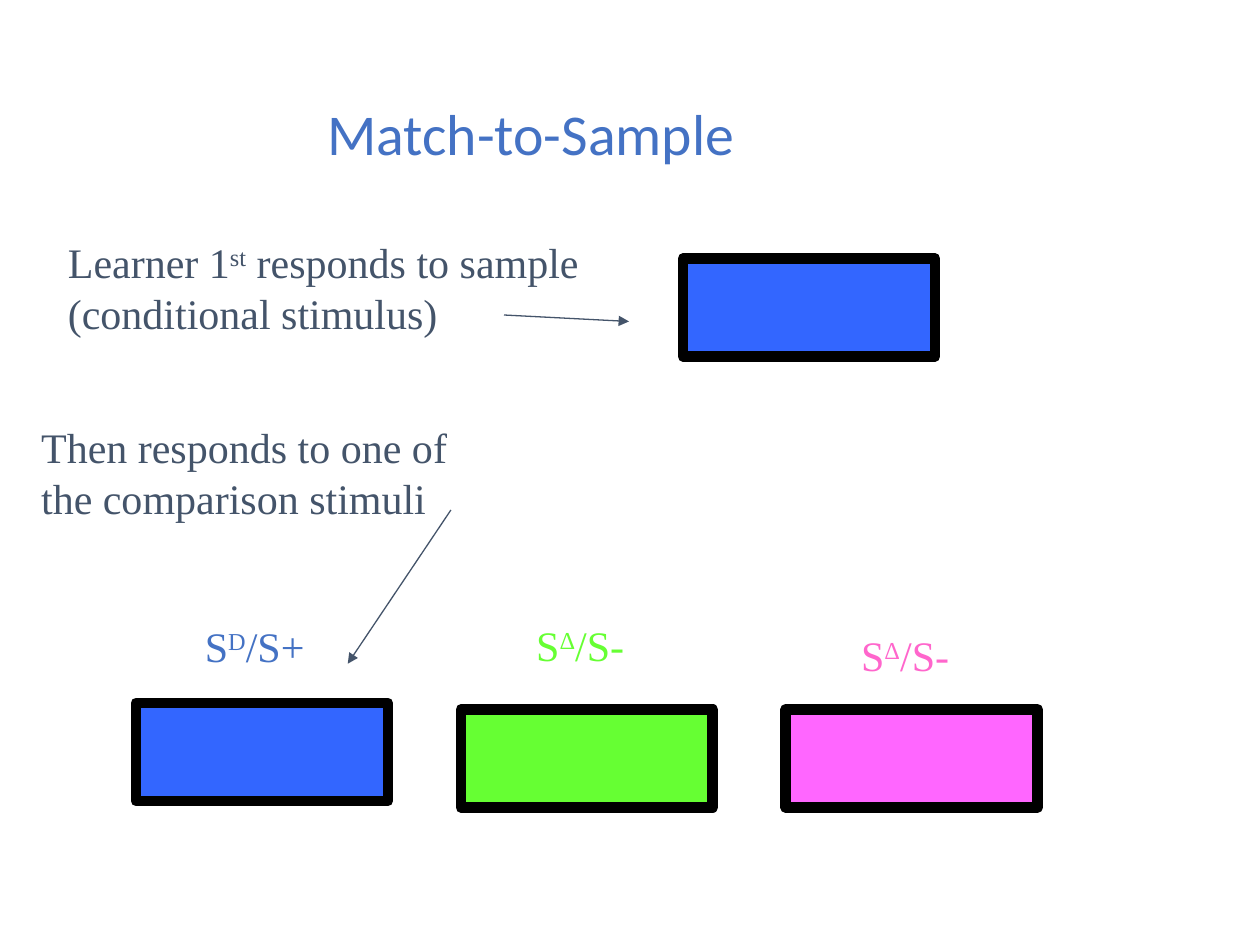
from lxml.etree import SubElement
from pptx import Presentation
from pptx.dml.color import RGBColor
from pptx.enum.shapes import MSO_CONNECTOR as Line, MSO_SHAPE as Shape
from pptx.enum.text import MSO_ANCHOR as Anchor
from pptx.oxml.ns import qn
from pptx.util import Cm, Pt

SLATE, ACCENT, BLUE = "44546A", "4472C4", "3366FF"
GREEN, PINK, ROSE = "66FF33", "FF66FF", "FF66CC"
CARD_WIDTH, CARD_HEIGHT = 5.08, 1.98
CARD_PITCH = 6.55
BODY = {"name": "Times New Roman", "size": Pt(24)}
HEADING = {"name": "Calibri", "size": Pt(33)}


def color(hex_text):
    return RGBColor.from_string(hex_text)


def add_text(page, box, spans, hex_text, formats=BODY):
    """Write (text, is_superscript) spans as one paragraph and return its frame."""
    frame = page.shapes.add_textbox(*map(Cm, box)).text_frame
    frame.word_wrap = True
    para = frame.paragraphs[0]
    for text, is_superscript in spans:
        span = para.add_run()
        span.text = text
        for name, value in formats.items():
            setattr(span.font, name, value)
        span.font.color.rgb = color(hex_text)
        if is_superscript:
            span._r.get_or_add_rPr().set("baseline", "30000")
    return frame


def add_card(page, left, top, fill):
    card = page.shapes.add_shape(
        Shape.RECTANGLE, Cm(left), Cm(top), Cm(CARD_WIDTH), Cm(CARD_HEIGHT))
    card.shadow.inherit = False
    card.fill.solid()
    card.fill.fore_color.rgb = color(fill)
    card.line.color.rgb = color("000000")
    card.line.width = Pt(6)


def add_arrow(page, start, end):
    arrow = page.shapes.add_connector(Line.STRAIGHT, *map(Cm, start + end))
    arrow.line.color.rgb = color(SLATE)
    arrow.line.width = Pt(0.75)
    SubElement(arrow.line._get_or_add_ln(), qn("a:tailEnd"), type="triangle")
    SubElement(arrow._element.spPr, qn("a:effectLst"))


def add_title(page, box):
    frame = add_text(page, box, [("Match-to-Sample", False)], ACCENT, HEADING)
    frame.vertical_anchor = Anchor.MIDDLE
    frame.paragraphs[0].line_spacing = 0.9


def add_sample_step(page, left, top):
    spans = [("Learner 1", False), ("st", True),
             (" responds to sample (conditional stimulus)", False)]
    add_text(page, (left, top, 11.58, 2.31), spans, SLATE)
    add_arrow(page, (left + 9.04, top + 1.7), (left + 11.56, top + 1.83))
    add_card(page, left + 12.65, top + 0.56, BLUE)


def add_comparison_step(page, left, top):
    spans = [("Then responds to one of the comparison stimuli", False)]
    add_text(page, (left, top, 9.58, 2.31), spans, SLATE)
    add_arrow(page, (left + 8.51, top + 1.9), (left + 6.43, top + 5))


def add_comparisons(page, left, top):
    """Place the row of labelled cards; offsets are measured from the row's corner."""
    choices = [
        # superscript, ending, text colour, fill, card drop, label indent, label rise
        ("D", "/S+", ACCENT, BLUE, 0, 1.14, 1.78),
        ("Δ", "/S-", GREEN, GREEN, 0.13, 1.27, 1.8),
        ("Δ", "/S-", ROSE, PINK, 0.13, 1.27, 1.6),
    ]
    for index, (mark, ending, ink, fill, drop, indent, rise) in enumerate(choices):
        card_left = left + index * CARD_PITCH
        add_card(page, card_left, top + drop, fill)
        spans = [("S", False), (mark, True), (ending, False)]
        add_text(page, (card_left + indent, top - rise, 2.62, 1.2), spans, ink)


def main():
    deck = Presentation()
    deck.slide_width, deck.slide_height = Cm(25.4), Cm(19.05)
    page = deck.slides.add_slide(deck.slide_layouts[6])
    add_title(page, (6.35, 0.64, 13.13, 4.24))
    add_sample_step(page, 1.12, 4.65)
    add_comparison_step(page, 0.58, 8.38)
    add_comparisons(page, 2.74, 14.17)
    deck.save("out.pptx")


if __name__ == "__main__":
    main()
